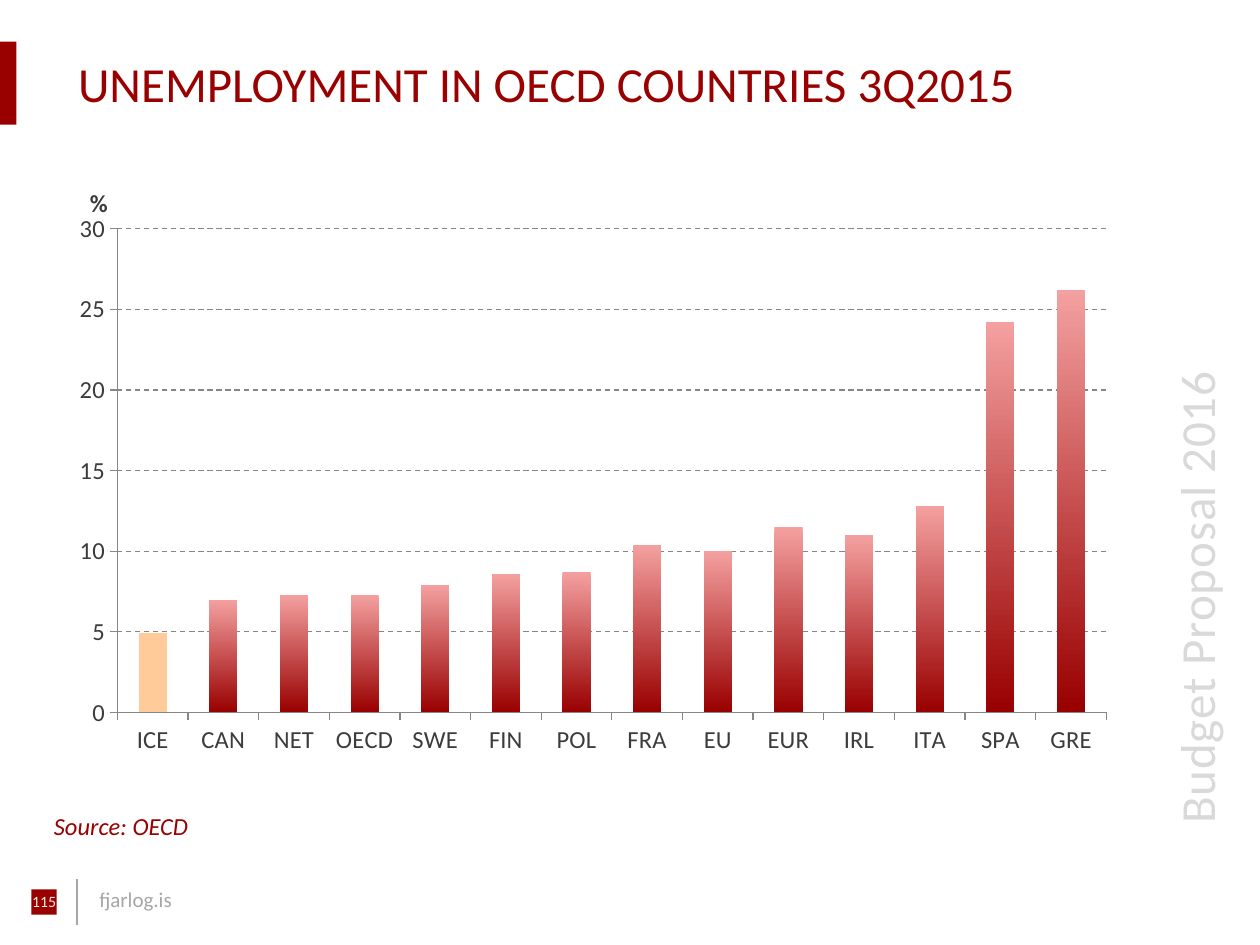
import pptx
import pptx.chart.data
import pptx.dml.color
import pptx.enum.chart
import pptx.enum.dml
import pptx.enum.shapes
import pptx.enum.text
import pptx.oxml
import pptx.oxml.ns
import pptx.util
from lxml import etree

RGB = pptx.dml.color.RGBColor
DARK_RED = RGB(0x99, 0x00, 0x00)
PALE_RED = RGB(0xF4, 0xA0, 0xA0)
PEACH = RGB(0xFF, 0xCC, 0x99)
CREAM = RGB(0xFF, 0xE6, 0xDC)
CHARCOAL = RGB(0x3C, 0x3C, 0x3B)
AXIS_GREY = RGB(0x86, 0x86, 0x86)
FOOTER_GREY = RGB(0xA6, 0xA6, 0xA6)
BANNER_GREY = RGB(0xD9, 0xD9, 0xD9)
FONT = "Calibri"

# The slide is a grid of square cells: 100 columns by 75 rows
COLUMNS, ROWS = 100, 75
CELL = pptx.util.Inches(0.1)

UNEMPLOYMENT = {
    "ICE": 4.9, "CAN": 7, "NET": 7.3, "OECD": 7.3, "SWE": 7.9,
    "FIN": 8.6, "POL": 8.7, "FRA": 10.4, "EU": 10, "EUR": 11.5,
    "IRL": 11, "ITA": 12.8, "SPA": 24.2, "GRE": 26.2,
}


def cells(*counts):
    return [int(count * CELL) for count in counts]


def within(box, column, row, width, height):
    """Place a part by its offset from the corner of a region."""
    return box[0] + column, box[1] + row, width, height


def write(frame, text, size, color, bold=False, italic=False, spacing=0,
          align=pptx.enum.text.PP_ALIGN.LEFT):
    frame.word_wrap = True
    paragraph = frame.paragraphs[0]
    paragraph.alignment = align
    run = paragraph.add_run()
    run.text = text
    font = run.font
    font.name, font.size = FONT, pptx.util.Pt(size)
    font.bold, font.italic, font.color.rgb = bold, italic, color
    if spacing:
        run._r.get_or_add_rPr().set("spc", str(int(spacing * 100)))


def add_text(slide, box, text, **style):
    label = slide.shapes.add_textbox(*cells(*box))
    write(label.text_frame, text, **style)
    return label


def add_block(slide, box):
    block = slide.shapes.add_shape(
        pptx.enum.shapes.MSO_SHAPE.RECTANGLE, *cells(*box))
    block.shadow.inherit = False
    block.fill.solid()
    block.fill.fore_color.rgb = DARK_RED
    block.line.fill.background()


def set_insets(frame):
    frame.margin_left = frame.margin_right = pptx.util.Inches(0.12)
    frame.margin_top = frame.margin_bottom = pptx.util.Inches(0.06)


def add_heading(slide, box):
    # Red tab at the slide's edge, then the title on the same rows
    add_block(slide, within(box, 0, 0, 1.3, box[3]))
    title = slide.shapes.title
    title.left, title.top, title.width, title.height = cells(
        *within(box, 5, 0, box[2] - 5, box[3]))
    frame = title.text_frame
    set_insets(frame)
    frame.auto_size = pptx.enum.text.MSO_AUTO_SIZE.NONE
    frame.vertical_anchor = pptx.enum.text.MSO_ANCHOR.MIDDLE
    write(frame, "UNEMPLOYMENT IN OECD COUNTRIES 3Q2015",
          size=28, color=DARK_RED)


def add_banner(slide, box):
    # Upright wording: the box is given as it stands before rotation
    banner = add_text(slide, box, "Budget Proposal 2016",
                      size=28, color=BANNER_GREY, spacing=0.5)
    banner.rotation = 270


def add_footer(slide, box):
    # Page number on its red square
    add_block(slide, within(box, 2.5, 0.8, 2, 2))
    number = add_text(slide, within(box, 0, 0.4, 7, 4.7), "115", size=9,
                      color=CREAM, align=pptx.enum.text.PP_ALIGN.CENTER)
    set_insets(number.text_frame)
    # Divider and web address
    divider = slide.shapes.add_connector(
        pptx.enum.shapes.MSO_CONNECTOR.STRAIGHT,
        *cells(box[0] + 6.1, box[1], box[0] + 6.1, box[1] + 3.6))
    divider.line.color.rgb = FOOTER_GREY
    divider.line.width = pptx.util.Pt(1)
    etree.SubElement(divider._element.spPr, pptx.oxml.ns.qn("a:effectLst"))
    add_text(slide, within(box, 6.9, 0.1, 18.7, 3), "fjarlog.is",
             size=12, color=FOOTER_GREY)


def chart_layout(x, y, width=None, height=None):
    """Manual layout in shares of the chart's own size."""
    entries = [("xMode", "edge"), ("yMode", "edge"), ("x", x), ("y", y)]
    if width:
        entries.insert(0, ("layoutTarget", "inner"))
        entries += [("w", width), ("h", height)]
    inner = "".join(f'<c:{tag} val="{value}"/>' for tag, value in entries)
    return pptx.oxml.parse_xml(
        f'<c:layout {pptx.oxml.ns.nsdecls("c")}>'
        f'<c:manualLayout>{inner}</c:manualLayout></c:layout>')


def set_layout(element, layout, index):
    for old in element.findall(pptx.oxml.ns.qn("c:layout")):
        element.remove(old)
    element.insert(index, layout)


def style_line(line):
    line.color.rgb = AXIS_GREY
    line.width = pptx.util.Pt(0.75)


def format_axes(chart):
    for axis in (chart.category_axis, chart.value_axis):
        axis.major_tick_mark = pptx.enum.chart.XL_TICK_MARK.OUTSIDE
        axis.minor_tick_mark = pptx.enum.chart.XL_TICK_MARK.NONE
        style_line(axis.format.line)
    percent = chart.value_axis
    percent.minimum_scale, percent.maximum_scale = 0, 30
    percent.major_unit = 5
    percent.has_major_gridlines = True
    gridline = percent.major_gridlines.format.line
    style_line(gridline)
    gridline.dash_style = pptx.enum.dml.MSO_LINE.DASH
    title = percent.axis_title
    write(title.text_frame, "%", size=14, color=CHARCOAL, bold=True)
    body = title._element.find(".//" + pptx.oxml.ns.qn("a:bodyPr"))
    body.set("rot", "0")
    body.set("vert", "horz")
    set_layout(title._element, chart_layout(0.02, 0.04), 1)


def add_unemployment_chart(slide, box):
    data = pptx.chart.data.CategoryChartData()
    data.categories = list(UNEMPLOYMENT)
    data.add_series("Series 1", list(UNEMPLOYMENT.values()))
    chart = slide.shapes.add_chart(
        pptx.enum.chart.XL_CHART_TYPE.COLUMN_CLUSTERED,
        *cells(*box), data).chart
    chart.has_title = chart.has_legend = False
    chart.font.name, chart.font.size = FONT, pptx.util.Pt(14)
    chart.font.color.rgb = CHARCOAL
    format_axes(chart)

    plot = chart.plots[0]
    plot.gap_width = 150
    plot.vary_by_categories = False
    set_layout(chart._chartSpace.chart.plotArea,
               chart_layout(0.05, 0.11, 0.93, 0.71), 0)
    # Red bars fade upwards; Iceland stands out
    countries = plot.series[0]
    countries.invert_if_negative = False
    fill = countries.format.fill
    fill.gradient()
    fill.gradient_angle = 270
    for stop, color in zip(fill.gradient_stops, (PALE_RED, DARK_RED)):
        stop.color.rgb = color
    iceland = countries.points[0].format.fill
    iceland.solid()
    iceland.fore_color.rgb = PEACH


def main():
    deck = pptx.Presentation()
    deck.slide_width, deck.slide_height = cells(COLUMNS, ROWS)
    slide = deck.slides.add_slide(deck.slide_layouts.get_by_name("Title Only"))
    add_heading(slide, (0, 3.3, 95.6, 6.6))
    add_banner(slide, (67.8, 36.4, 54.2, 5.7))
    add_unemployment_chart(slide, (5.1, 12.2, 84.4, 54.1))
    add_text(slide, (3.3, 63.9, 49.3, 3.4), "Source: OECD",
             size=14, color=DARK_RED, italic=True)
    add_footer(slide, (0, 69.8, COLUMNS, 5.2))
    deck.save("out.pptx")


if __name__ == "__main__":
    main()
